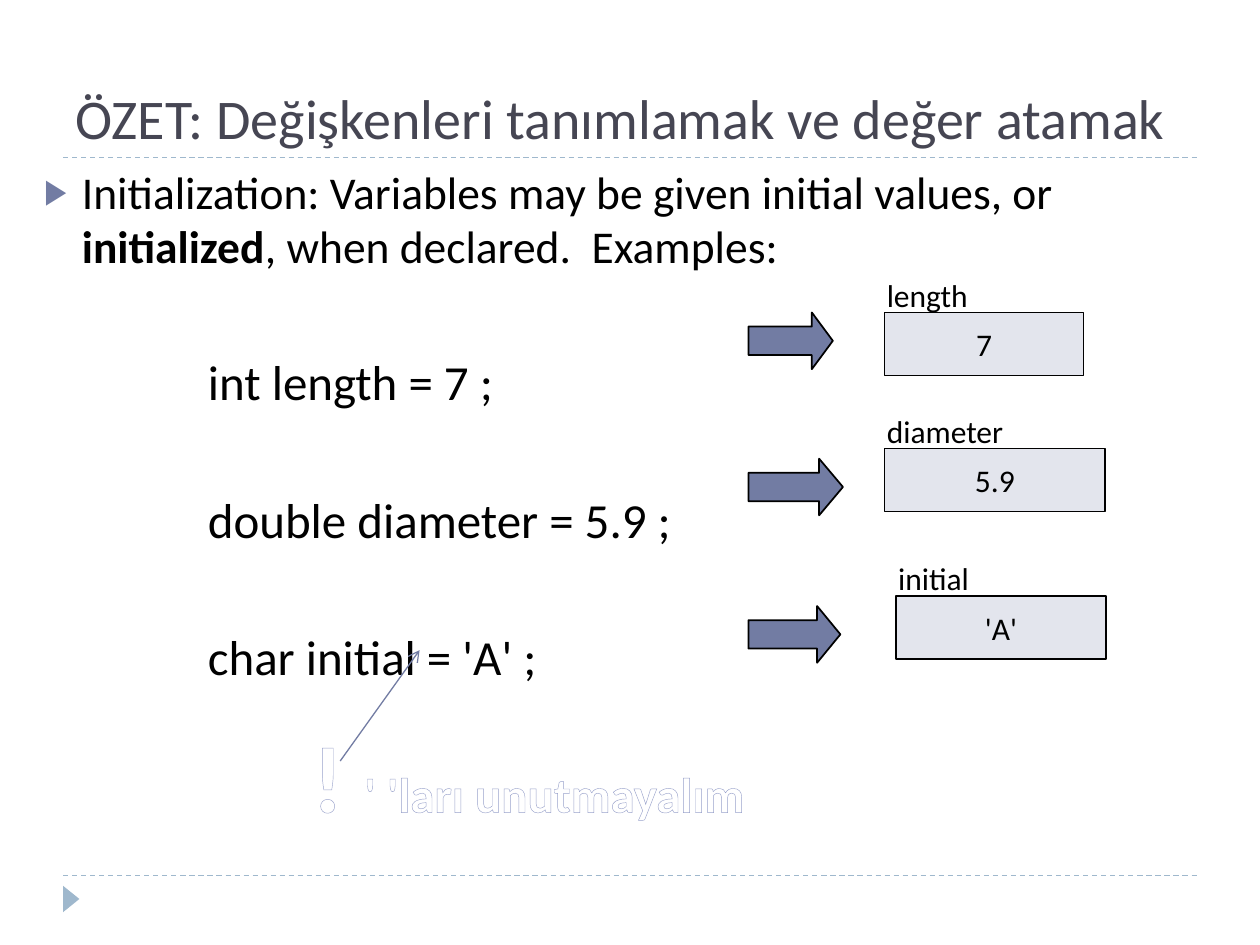
from lxml.etree import SubElement as Sub
from pptx import Presentation
from pptx.dml.color import RGBColor
from pptx.enum.dml import MSO_LINE
from pptx.enum.shapes import MSO_CONNECTOR, MSO_SHAPE as Kind
from pptx.enum.text import MSO_ANCHOR as Anchor, MSO_AUTO_SIZE as Fit, PP_ALIGN as Align
from pptx.oxml.ns import qn
from pptx.util import Inches, Pt

HUE = {"ink": "000000", "title": "464653", "blue": "727CA3", "pale": "E3E5ED",
       "rule": "9FB8CD", "edge": "99A2CB", "white": "FFFFFF"}


def style(run, size, hue="ink", bold=False):
    run.font.name, run.font.size, run.font.bold = "Calibri", Pt(size), bold
    run.font.color.rgb = RGBColor.from_string(HUE[hue])


def add_line(x1, y1, x2, y2, hue):
    line = slide.shapes.add_connector(
        MSO_CONNECTOR.STRAIGHT, Inches(x1), Inches(y1), Inches(x2), Inches(y2))
    line.line.width = Pt(0.75)
    line.line.color.rgb = RGBColor.from_string(HUE[hue])
    Sub(line._element.spPr, qn("a:effectLst"))
    return line


deck = Presentation()
deck.slide_width, deck.slide_height = Inches(10), Inches(7.5)
slide = deck.slides.add_slide(deck.slide_layouts[1])
shapes = slide.shapes

# Dashed rules and corner marker
for y in (6.95, 1.25):
    add_line(0.5, y, 9.5, y, "rule").line.dash_style = MSO_LINE.DASH
mark = shapes.add_shape(Kind.ISOSCELES_TRIANGLE, Inches(0.46), Inches(7.07),
                        Inches(0.21), Inches(0.13))
mark.rotation = 90
mark.shadow.inherit = False
mark.fill.solid()
mark.fill.fore_color.rgb = RGBColor.from_string(HUE["rule"])
mark.line.fill.background()

# Title
title = shapes.title
title.left, title.top, title.width, title.height = map(Inches, (0.5, 0.17, 9, 1.08))
frame = title.text_frame
frame.text = "ÖZET: Değişkenleri tanımlamak ve değer atamak"
frame.auto_size, frame.vertical_anchor = Fit.NONE, Anchor.BOTTOM
frame.paragraphs[0].alignment = Align.LEFT
style(frame.paragraphs[0].runs[0], 32, "title")

# Body: one bulleted statement, then the code lines
body = slide.placeholders[1]
body.left, body.top, body.width, body.height = map(Inches, (0.25, 1.25, 9.42, 5.67))
frame = body.text_frame
frame.auto_size, frame.vertical_anchor = Fit.NONE, Anchor.TOP
lead = frame.paragraphs[0]
lead.space_before = Pt(6)
for text, bold in (("Initialization: Variables may be given initial values, or ", False),
                   ("initialized", True), (", when declared.  Examples:", False)):
    run = lead.add_run()
    run.text = text
    style(run, 26, bold=bold)
props = lead._p.get_or_add_pPr()
props.set("marL", str(Inches(0.3)))
props.set("indent", str(-Inches(0.3)))
Sub(Sub(props, qn("a:buClr")), qn("a:srgbClr"), val=HUE["blue"])
Sub(props, qn("a:buSzPct"), val="76000")
Sub(props, qn("a:buFont"), typeface="Arial")
Sub(props, qn("a:buChar"), char="▶")

for code in ("int length = 7 ;", "double diameter = 5.9 ;", "char initial = 'A' ;"):
    para = frame.add_paragraph()
    para.text = code
    para.space_before = Pt(45)
    style(para.runs[0], 28)
    props = para._p.get_or_add_pPr()
    props.set("marL", str(Inches(1.3)))
    props.set("indent", "0")
    Sub(props, qn("a:buNone"))

# Variables: name, value, box (left, top, width), arrow (top, width, head)
VARS = [("length", "7", 7.02, 2.48, 1.58, 2.48, 0.67, 0.37),
        ("diameter", "5.9", 7.02, 3.56, 1.75, 3.64, 0.75, 0.42),
        ("initial", "'A'", 7.11, 4.73, 1.67, 4.81, 0.73, 0.41)]
for name, value, left, top, wide, level, reach, head in VARS:
    box = shapes.add_shape(Kind.RECTANGLE, Inches(left), Inches(top),
                           Inches(wide), Inches(0.5))
    arrow = shapes.add_shape(Kind.RIGHT_ARROW, Inches(5.94), Inches(level),
                             Inches(reach), Inches(0.45))
    arrow.adjustments[0], arrow.adjustments[1] = 0.5, head
    for shape, hue in ((box, "pale"), (arrow, "blue")):
        shape.shadow.inherit = False
        shape.fill.solid()
        shape.fill.fore_color.rgb = RGBColor.from_string(HUE[hue])
        shape.line.color.rgb = RGBColor.from_string(HUE["ink"])
        shape.line.width = Pt(1)
    label = shapes.add_textbox(Inches(left - 0.08), Inches(top - 0.34),
                               Inches(1.33), Inches(0.4))
    for shape, text in ((box, value), (label, name)):
        shape.text_frame.text = text
        style(shape.text_frame.paragraphs[0].runs[0], 18)
    box.text_frame.word_wrap = False
    box.text_frame.vertical_anchor = Anchor.MIDDLE
    box.text_frame.paragraphs[0].alignment = Align.CENTER
    label.text_frame.word_wrap = True

# Pointer to the quotes and outlined reminder
pointer = add_line(2.7, 6.04, 3.33, 5.16, "blue")
Sub(pointer.line._get_or_add_ln(), qn("a:tailEnd"), type="arrow")
note = shapes.add_textbox(Inches(2.38), Inches(5.65), Inches(3.99), Inches(1.48))
note.text_frame.word_wrap = True
para = note.text_frame.paragraphs[0]
for text, size in (("! ", 54), ("' 'ları unutmayalım", 28)):
    run = para.add_run()
    run.text = text
    style(run, size, "white", True)
    props = run._r.get_or_add_rPr()
    edge = Sub(props, qn("a:ln"), w=str(Pt(2.48)))
    Sub(Sub(edge, qn("a:solidFill")), qn("a:srgbClr"), val=HUE["edge"])
    props.insert(0, edge)

deck.save("out.pptx")
